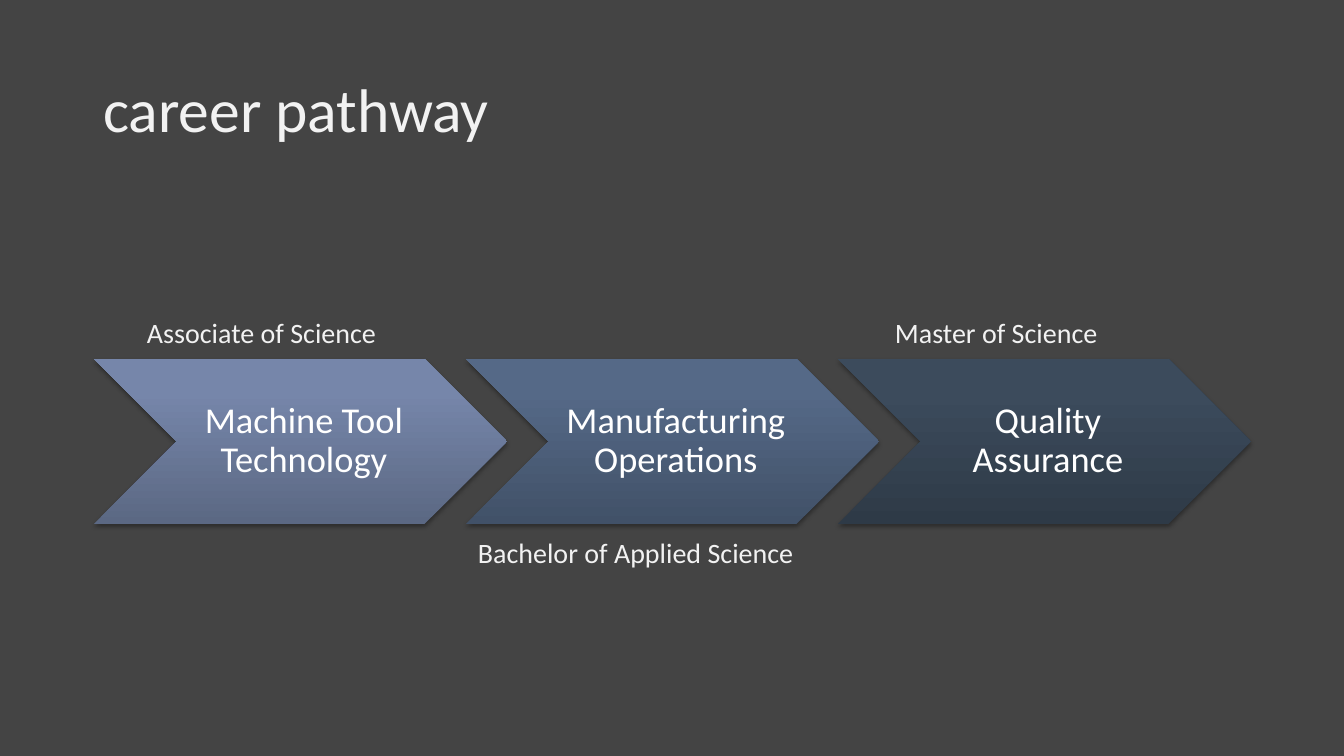
from copy import deepcopy

from lxml import etree
from pptx import Presentation
from pptx.dml.color import RGBColor
from pptx.enum.shapes import MSO_SHAPE
from pptx.enum.text import MSO_ANCHOR, PP_ALIGN
from pptx.oxml.ns import qn
from pptx.util import Pt

CHEVRON = MSO_SHAPE.CHEVRON
MIDDLE = MSO_ANCHOR.MIDDLE
LEFT, CENTER = PP_ALIGN.LEFT, PP_ALIGN.CENTER

BACKGROUND = RGBColor(0x44, 0x44, 0x44)
PALE = RGBColor(0xF2, 0xF2, 0xF2)
WHITE = RGBColor(0xFF, 0xFF, 0xFF)
BLUE = [RGBColor(0x5B, 0x68, 0x83), RGBColor(0x76, 0x86, 0xAA), RGBColor(0x76, 0x87, 0xAB)]
SLATE = [RGBColor(0x41, 0x51, 0x68), RGBColor(0x55, 0x69, 0x87), RGBColor(0x54, 0x69, 0x89)]
NAVY = [RGBColor(0x2E, 0x3A, 0x47), RGBColor(0x3C, 0x4B, 0x5C), RGBColor(0x3C, 0x4C, 0x5D)]

# Content
TITLE = "career pathway"
STEPS = [  # program, gradient from bottom to top
    ("Machine Tool Technology", BLUE),
    ("Manufacturing Operations", SLATE),
    ("Quality Assurance", NAVY),
]
DEGREES = [  # degree, left, top, width in px
    ("Associate of Science", 137, 303, 267),
    ("Bachelor of Applied Science", 468, 523, 361),
    ("Master of Science", 885, 303, 240),
]

# Layout in px
SLIDE_WIDTH, SLIDE_HEIGHT = 1344, 756
TITLE_BOX = (93, 40, 1159, 146)
STEP_LEFT, STEP_TOP, STEP_WIDTH, STEP_HEIGHT = 94, 359, 413, 165
STEP_PITCH = 372
DEGREE_HEIGHT = 62
GRADIENT_POSITIONS = (0, 0.8, 1)
FONT = "Calibri"


def px(length):
    return round(length * 914400 / 100.8)


def place(shape, left, top, width, height):
    shape.left, shape.top = px(left), px(top)
    shape.width, shape.height = px(width), px(height)


def write(shape, text, size, color, alignment):
    frame = shape.text_frame
    frame.word_wrap = True
    frame.vertical_anchor = MIDDLE
    paragraph = frame.paragraphs[0]
    paragraph.alignment = alignment
    paragraph.line_spacing = 0.9
    run = paragraph.add_run()
    run.text = text
    run.font.name = FONT
    run.font.size = Pt(size)
    run.font.color.rgb = color


def fill_gradient(shape, colors):
    shape.fill.gradient()
    shape.fill.gradient_angle = 90
    stop_list = shape.element.spPr.find(".//" + qn("a:gsLst"))
    stop_list.append(deepcopy(stop_list[-1]))
    for stop, position, color in zip(shape.fill.gradient_stops, GRADIENT_POSITIONS, colors):
        stop.position = position
        stop.color.rgb = color


def add_soft_shadow(shape):
    shape.shadow.inherit = False
    effects = shape.element.spPr.find(qn("a:effectLst"))
    shadow = etree.SubElement(effects, qn("a:outerShdw"), blurRad=str(Pt(3.1)),
                              dist=str(Pt(1.8)), dir="5400000", rotWithShape="0")
    color = etree.SubElement(shadow, qn("a:srgbClr"), val="000000")
    etree.SubElement(color, qn("a:alpha"), val="35000")


def main():
    presentation = Presentation()
    presentation.slide_width, presentation.slide_height = px(SLIDE_WIDTH), px(SLIDE_HEIGHT)
    slide = presentation.slides.add_slide(presentation.slide_layouts[5])
    slide.background.fill.solid()
    slide.background.fill.fore_color.rgb = BACKGROUND

    # Title
    title = slide.shapes.title
    place(title, *TITLE_BOX)
    write(title, TITLE, 44, PALE, LEFT)

    # Chevron steps
    for index, (program, colors) in enumerate(STEPS):
        step = slide.shapes.add_shape(CHEVRON, 0, 0, 0, 0)
        place(step, STEP_LEFT + index * STEP_PITCH, STEP_TOP, STEP_WIDTH, STEP_HEIGHT)
        fill_gradient(step, colors)
        step.line.fill.background()
        add_soft_shadow(step)
        frame = step.text_frame
        frame.margin_left = px(11)
        frame.margin_top = frame.margin_right = frame.margin_bottom = px(4)
        write(step, program, 26, WHITE, CENTER)

    # Degree captions
    for degree, left, top, width in DEGREES:
        caption = slide.shapes.add_textbox(0, 0, 0, 0)
        place(caption, left, top, width, DEGREE_HEIGHT)
        write(caption, degree, 20, PALE, LEFT)

    presentation.save("out.pptx")


if __name__ == "__main__":
    main()
